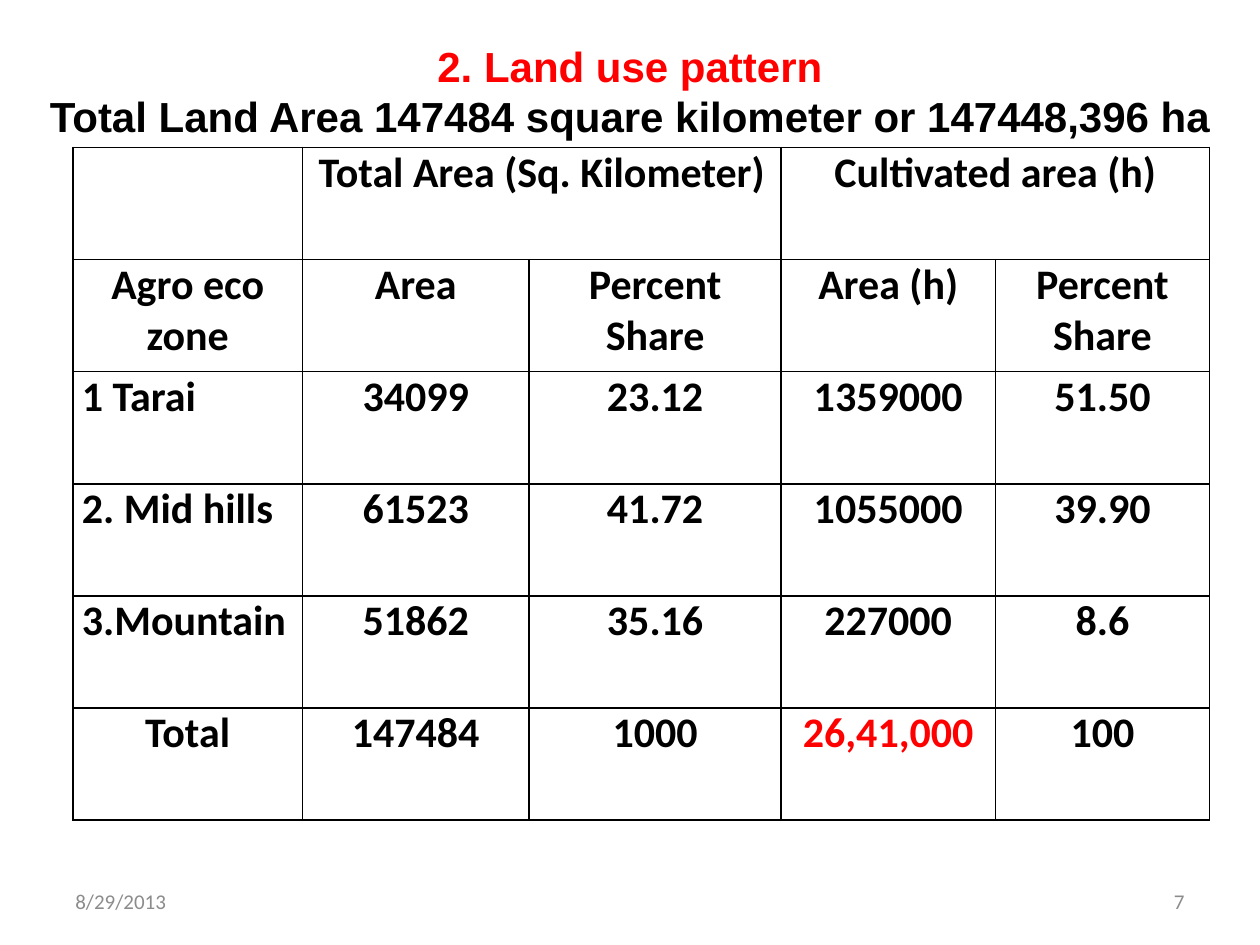
from lxml.etree import SubElement
from pptx import Presentation
from pptx.dml.color import RGBColor
from pptx.enum.text import MSO_ANCHOR, PP_ALIGN
from pptx.oxml.ns import qn
from pptx.util import Inches, Pt

BLACK, RED, GREY = "000000", "FF0000", "8C8C8C"
COLUMNS = [1.82, 1.8, 2, 1.7, 1.7]
ROW_HEIGHT = 0.89
LAND_USE = [
    ["", "Total Area (Sq. Kilometer)", "", "Cultivated area (h)", ""],
    ["Agro eco zone", "Area", "Percent Share", "Area (h)", "Percent Share"],
    ["1 Tarai", "34099", "23.12", "1359000", "51.50"],
    ["2. Mid hills", "61523", "41.72", "1055000", "39.90"],
    ["3.Mountain", "51862", "35.16", "227000", "8.6"],
    ["Total", "147484", "1000", "26,41,000", "100"],
]
ZONE_ROWS = range(2, 5)
HIGHLIGHT = (5, 3)
HEADER_SPANS = [(1, 2), (3, 4)]


def rgb(value):
    return RGBColor.from_string(value)


def set_all(target, values):
    for name, value in values.items():
        setattr(target, name, value)


def write(paragraph, words, align, color, **font):
    paragraph.alignment = align
    run = paragraph.add_run()
    run.text = words
    set_all(run.font, font)
    run.font.color.rgb = rgb(color)


def place_title(title, box):
    set_all(title, dict(zip(("left", "top", "width", "height"), map(Inches, box))))
    frame = title.text_frame
    set_all(frame, {"word_wrap": True, "vertical_anchor": MSO_ANCHOR.TOP})
    lines = [("2. Land use pattern", RED),
             ("Total Land Area 147484 square kilometer or 147448,396 ha", BLACK)]
    for index, (words, color) in enumerate(lines):
        paragraph = frame.add_paragraph() if index else frame.paragraphs[0]
        write(paragraph, words, PP_ALIGN.CENTER, color,
              name="Arial", size=Pt(24), bold=True)


def draw_borders(cell):
    properties = cell._tc.get_or_add_tcPr()
    for side in ("a:lnL", "a:lnR", "a:lnT", "a:lnB"):
        line = SubElement(properties, qn(side), w=str(Pt(1)))
        fill = SubElement(line, qn("a:solidFill"))
        SubElement(fill, qn("a:srgbClr"), val=BLACK)


def place_land_use(slide, left, top):
    table = slide.shapes.add_table(
        len(LAND_USE), len(COLUMNS), Inches(left), Inches(top),
        Inches(sum(COLUMNS)), Inches(ROW_HEIGHT * len(LAND_USE))).table
    set_all(table, {"first_row": False, "horz_banding": False})
    for column, width in zip(table.columns, COLUMNS):
        column.width = Inches(width)
    for first, last in HEADER_SPANS:
        table.cell(0, first).merge(table.cell(0, last))
    margins = {"margin_left": Inches(0.07), "margin_right": Inches(0.07),
               "margin_top": 0, "margin_bottom": 0}
    for r, values in enumerate(LAND_USE):
        for c, words in enumerate(values):
            cell = table.cell(r, c)
            set_all(cell, margins)
            draw_borders(cell)
            cell.fill.background()
            if words:
                is_zone = c == 0 and r in ZONE_ROWS
                write(cell.text_frame.paragraphs[0], words,
                      PP_ALIGN.LEFT if is_zone else PP_ALIGN.CENTER,
                      RED if (r, c) == HIGHLIGHT else BLACK,
                      name="Calibri", size=Pt(24), bold=True)


def place_footer(slide, left, top, width, height):
    part_width = 2.33
    parts = [("8/29/2013", left, PP_ALIGN.LEFT),
             ("7", left + width - part_width, PP_ALIGN.RIGHT)]
    for words, x, align in parts:
        frame = slide.shapes.add_textbox(
            *map(Inches, (x, top, part_width, height))).text_frame
        set_all(frame, {"word_wrap": True, "vertical_anchor": MSO_ANCHOR.MIDDLE})
        write(frame.paragraphs[0], words, align, GREY, name="Calibri", size=Pt(12))


def main():
    deck = Presentation()
    set_all(deck, {"slide_width": Inches(10), "slide_height": Inches(7.5)})
    slide = deck.slides.add_slide(deck.slide_layouts[5])
    place_title(slide.shapes.title, (0, 0.27, 10, 0.9))
    place_land_use(slide, 0.58, 1.17)
    place_footer(slide, 0.5, 6.95, 9, 0.4)
    deck.save("out.pptx")


if __name__ == "__main__":
    main()
